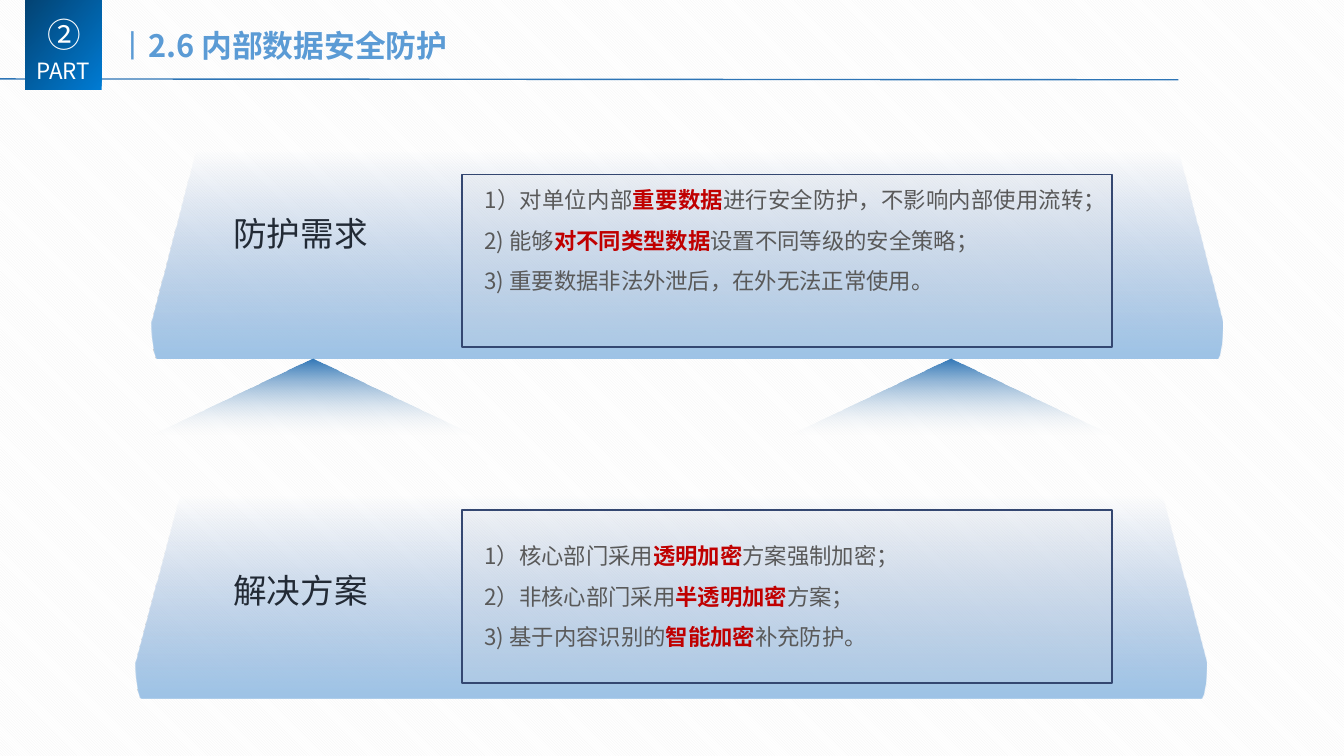
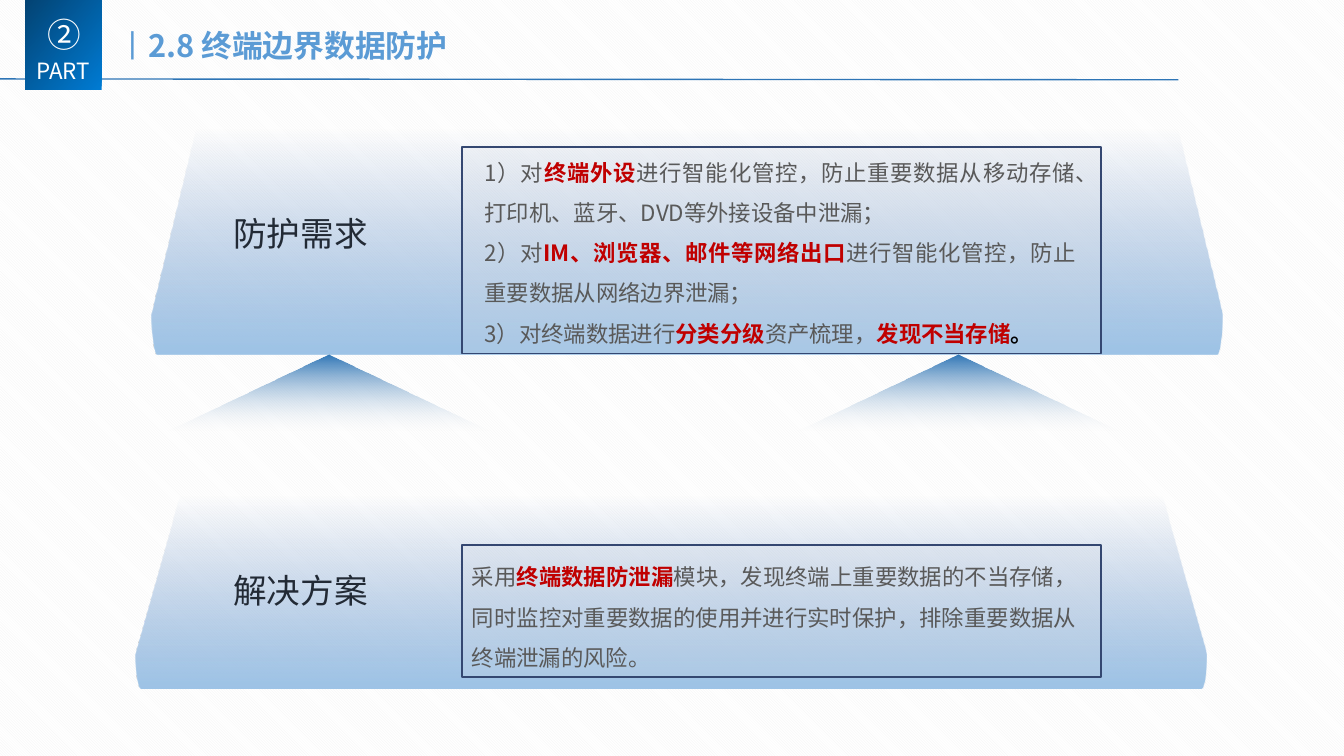
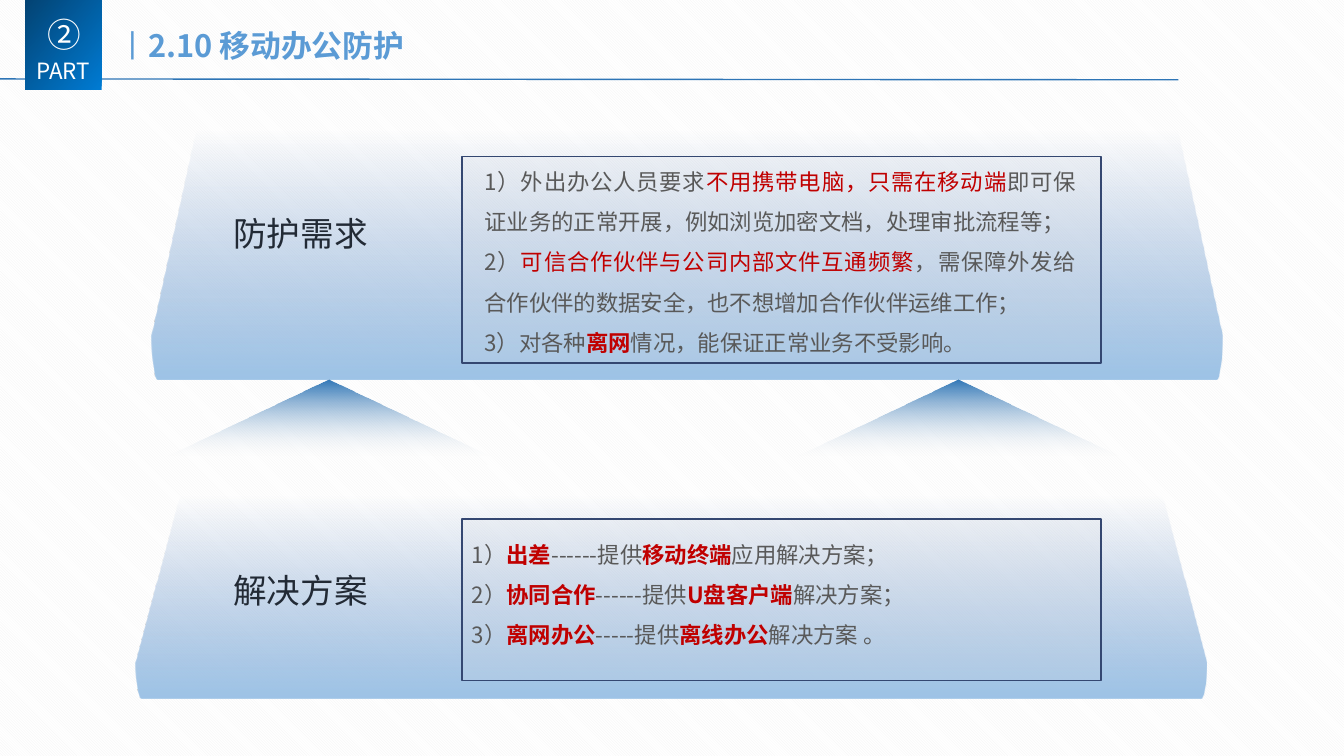
from dataclasses import dataclass
from functools import partial
from typing import NamedTuple

from lxml.etree import SubElement
from pptx import Presentation
from pptx.dml.color import RGBColor
from pptx.enum.dml import MSO_PATTERN as Pattern
from pptx.enum.shapes import MSO_CONNECTOR as Wire, MSO_SHAPE as Shape
from pptx.enum.text import MSO_AUTO_SIZE as Fit, PP_ALIGN as Align
from pptx.oxml.ns import qn
from pptx.util import Emu, Inches, Pt

COLS, ROWS = 160, 90
CELL = Inches(1) / 12
FONT = "Noto Sans CJK SC"
GREY, RED, BLACK, WHITE = "595959", "C00000", "000000", "FFFFFF"
NAVY, SKY, BLUE, INK = "344771", "5B9BD5", "2E75B6", "222A35"


class Run(NamedTuple):
    text: str
    color: str = GREY
    bold: bool = False


class Box(NamedTuple):
    """A place on the grid, in columns and rows."""
    x: float
    y: float
    w: float
    h: float


class Stop(NamedTuple):
    pos: float
    color: str
    alpha: int = 100


hot = partial(Run, color=RED, bold=True)
red = partial(Run, color=RED)
Para = list[Run | str]


@dataclass
class Part:
    panel: Box
    frame: Box
    body: Box
    paras: list[Para]


@dataclass
class Page:
    title: str
    tips: tuple[float, float]
    need: Part
    plan: Part


def grid(n: float) -> Emu:
    return Emu(round(n * CELL))


def place(box: Box) -> list[Emu]:
    return [grid(n) for n in box]


def rgb(code: str) -> RGBColor:
    return RGBColor.from_string(code)


def assign(obj, values: dict) -> None:
    for name, value in values.items():
        setattr(obj, name, value)


def fade(fill, alpha: int) -> None:
    """Set the opacity, in percent, of the colour inside a fill or stop element."""
    color = next(fill.iter(qn("a:srgbClr")))
    SubElement(color, qn("a:alpha"), val=str(alpha * 1000))


def shade(shape, stops: tuple[Stop, Stop], angle: int) -> None:
    fill = shape.fill
    fill.gradient()
    fill.gradient_angle = angle
    for item, stop in zip(fill.gradient_stops, stops):
        assign(item, {"position": stop.pos})
        item.color.rgb = rgb(stop.color)
    marks = shape._element.spPr.iter(qn("a:gs"))
    for mark, stop in zip(marks, stops):
        if stop.alpha < 100:
            fade(mark, stop.alpha)
    shape.line.fill.background()
    shape.shadow.inherit = False


def write(slide, box: Box, paras: list[Para], size: int,
          align: Align = Align.LEFT, gap: float = 1.0) -> None:
    frame = slide.shapes.add_textbox(*place(box)).text_frame
    assign(frame, {"word_wrap": True, "auto_size": Fit.SHAPE_TO_FIT_TEXT})
    for i, runs in enumerate(paras):
        para = frame.add_paragraph() if i else frame.paragraphs[0]
        assign(para, {"alignment": align, "line_spacing": gap})
        for item in runs:
            item = Run(item) if isinstance(item, str) else item
            run = para.add_run()
            run.text = item.text
            assign(run.font, {"name": FONT, "size": Pt(size), "bold": item.bold})
            run.font.color.rgb = rgb(item.color)
            SubElement(run.font._element, qn("a:ea"), typeface=FONT)


def curve(a, b, c, d, steps: int = 8) -> list[tuple[float, float]]:
    """Points along a cubic curve from a to d."""
    ts = [i / steps for i in range(steps + 1)]
    return [tuple((1 - t) ** 3 * p + 3 * t * (1 - t) ** 2 * q
                  + 3 * t * t * (1 - t) * r + t ** 3 * s
                  for p, q, r, s in zip(a, b, c, d)) for t in ts]


def draw_panel(slide, box: Box) -> None:
    foot = curve((.0056, 1), (.003, 1), (0, .92), (0, .83))
    head = curve((.04, .08), (.044, .01), (.049, 0), (.053, 0))
    left = foot + head
    right = [(1 - x, y) for x, y in reversed(left)]
    pts = [(grid(box.x + x * box.w), grid(box.y + y * box.h))
           for x, y in left + right]
    path = slide.shapes.build_freeform(*pts[0])
    path.add_line_segments(pts[1:], close=True)
    shade(path.convert_to_shape(), (Stop(.05, "8AA5CE", 0), Stop(1, "9DC3E6")), 270)


def draw_frame(slide, box: Box) -> None:
    shape = slide.shapes.add_shape(Shape.RECTANGLE, *place(box))
    shape.shadow.inherit = False
    shape.fill.solid()
    shape.fill.fore_color.rgb = rgb("D6DCE5")
    fade(shape._element.spPr, 20)
    shape.line.color.rgb = rgb(NAVY)
    shape.line.width = Pt(1)


def draw_tip(slide, x: float, y: float) -> None:
    shape = slide.shapes.add_shape(Shape.FLOWCHART_EXTRACT, *place(Box(x, y, 38.4, 9)))
    shade(shape, (Stop(0, BLUE), Stop(1, "E6EAEF", 0)), 270)


def draw_head(slide, title: str) -> None:
    """Draw the background, rule, badge and title."""
    fill = slide.background.fill
    fill.patterned()
    fill.pattern = Pattern.LIGHT_DOWNWARD_DIAGONAL
    fill.fore_color.rgb = rgb("F2F2F2")
    fill.back_color.rgb = rgb(WHITE)
    ends = [grid(n) for n in (0, 9.4, 140.3, 9.5)]
    rule = slide.shapes.add_connector(Wire.STRAIGHT, *ends)
    rule.line.color.rgb = rgb(BLUE)
    rule.line.width = Pt(1)
    SubElement(rule._element.spPr, qn("a:effectLst"))
    badge = slide.shapes.add_shape(Shape.RECTANGLE, *place(Box(3, 0, 9.1, 10.7)))
    shade(badge, (Stop(0, "007BD3"), Stop(1, "034373")), 140)
    write(slide, Box(4, 1.1, 7.2, 6), [[Run("②", WHITE)]], 24, Align.CENTER)
    write(slide, Box(.7, 6.2, 13.6, 4.4), [[Run("PART", WHITE)]], 16, Align.CENTER)
    write(slide, Box(12.8, 2.6, 64, 5.6),
          [[Run("丨", SKY), Run(title, SKY, True)]], 22)


def draw_page(slide, page: Page) -> None:
    draw_head(slide, page.title)
    parts = page.need, page.plan
    for part in parts:
        draw_panel(slide, part.panel)
        draw_frame(slide, part.frame)
    for x in page.tips:
        draw_tip(slide, x, page.need.panel.y + page.need.panel.h)
    for part, name, y in zip(parts, ("防护需求", "解决方案"), (24.7, 67.3)):
        write(slide, Box(26.6, y, 25.3, 6), [[Run(name, INK)]], 24)
        write(slide, part.body, part.paras, 16, Align.JUSTIFY, 1.5)


def need(y: float, h: float, frame: Box, body: tuple[float, float],
         paras: list[Para]) -> Part:
    w, tall = body
    return Part(Box(18.1, y, 127.4, h), frame,
                Box(56.5, frame.y - .8, w, tall), paras)


def plan(h: float, frame: Box, body: tuple[float, float, float],
         paras: list[Para]) -> Part:
    return Part(Box(16.2, 57.8, 127.4, h), frame, Box(*body, 15.7), paras)


PAGES = [
    Page("2.6 内部数据安全防护", (18.1, 94),
         need(16.7, 26, Box(55, 20.8, 77.4, 20.5), (73.8, 15.7), [
             ["1）对单位内部", hot("重要数据"), "进行安全防护，不影响内部使用流转；"],
             ["2) 能够", hot("对不同类型数据"), "设置不同等级的安全策略；"],
             ["3) 重要数据非法外泄后，在外无法正常使用。"]]),
         plan(25.4, Box(55, 60.7, 77.4, 20.6), (56.5, 62.4, 69.8), [
             ["1）核心部门采用", hot("透明加密"), "方案强制加密；"],
             ["2）非核心部门采用", hot("半透明加密"), "方案；"],
             ["3) 基于内容识别的", hot("智能加密"), "补充防护。"]])),
    Page("2.8 终端边界数据防护", (20, 94.9),
         need(14, 28.2, Box(55, 17.5, 76.1, 24.6), (72.8, 25.4), [
             ["1）对", hot("终端外设"),
              "进行智能化管控，防止重要数据从移动存储、打印机、蓝牙、DVD等外接设备中泄漏；"],
             ["2）对", hot("IM、浏览器、邮件等网络出口"),
              "进行智能化管控，防止重要数据从网络边界泄漏；"],
             ["3）对终端数据进行", hot("分类分级"), "资产梳理，",
              hot("发现不当存储"), Run("。", BLACK, True)]]),
         plan(24.2, Box(55, 64.9, 76.1, 15.7), (55, 64.9, 74.4), [
             ["采用", hot("终端数据防泄漏"),
              "模块，发现终端上重要数据的不当存储，同时监控对重要数据的使用"
              "并进行实时保护，排除重要数据从终端泄漏的风险。"]])),
    Page("2.10 移动办公防护", (20, 94.9),
         need(14, 31.2, Box(55, 18.6, 76.1, 24.6), (72.8, 25.4), [
             ["1）外出办公人员要求", red("不用携带电脑，只需在移动端"),
              "即可保证业务的正常开展，例如浏览加密文档，处理审批流程等；"],
             ["2）", red("可信合作伙伴与公司内部文件互通频繁"),
              "，需保障外发给合作伙伴的数据安全，也不想增加合作伙伴运维工作；"],
             ["3）对各种", hot("离网"), "情况，能保证正常业务不受影响。"]]),
         plan(25.4, Box(55, 61.8, 76.1, 19.2), (55, 62.2, 74.4), [
             ["1）", hot("出差"), "------提供", hot("移动终端"), "应用解决方案；"],
             ["2）", hot("协同合作"), "------提供", hot("U盘客户端"), "解决方案；"],
             ["3）", hot("离网办公"), "-----提供", hot("离线办公"), "解决方案 。"]])),
]


def main() -> None:
    deck = Presentation()
    assign(deck, {"slide_width": grid(COLS), "slide_height": grid(ROWS)})
    blank = deck.slide_layouts[6]
    for page in PAGES:
        draw_page(deck.slides.add_slide(blank), page)
    deck.save("out.pptx")


if __name__ == "__main__":
    main()
